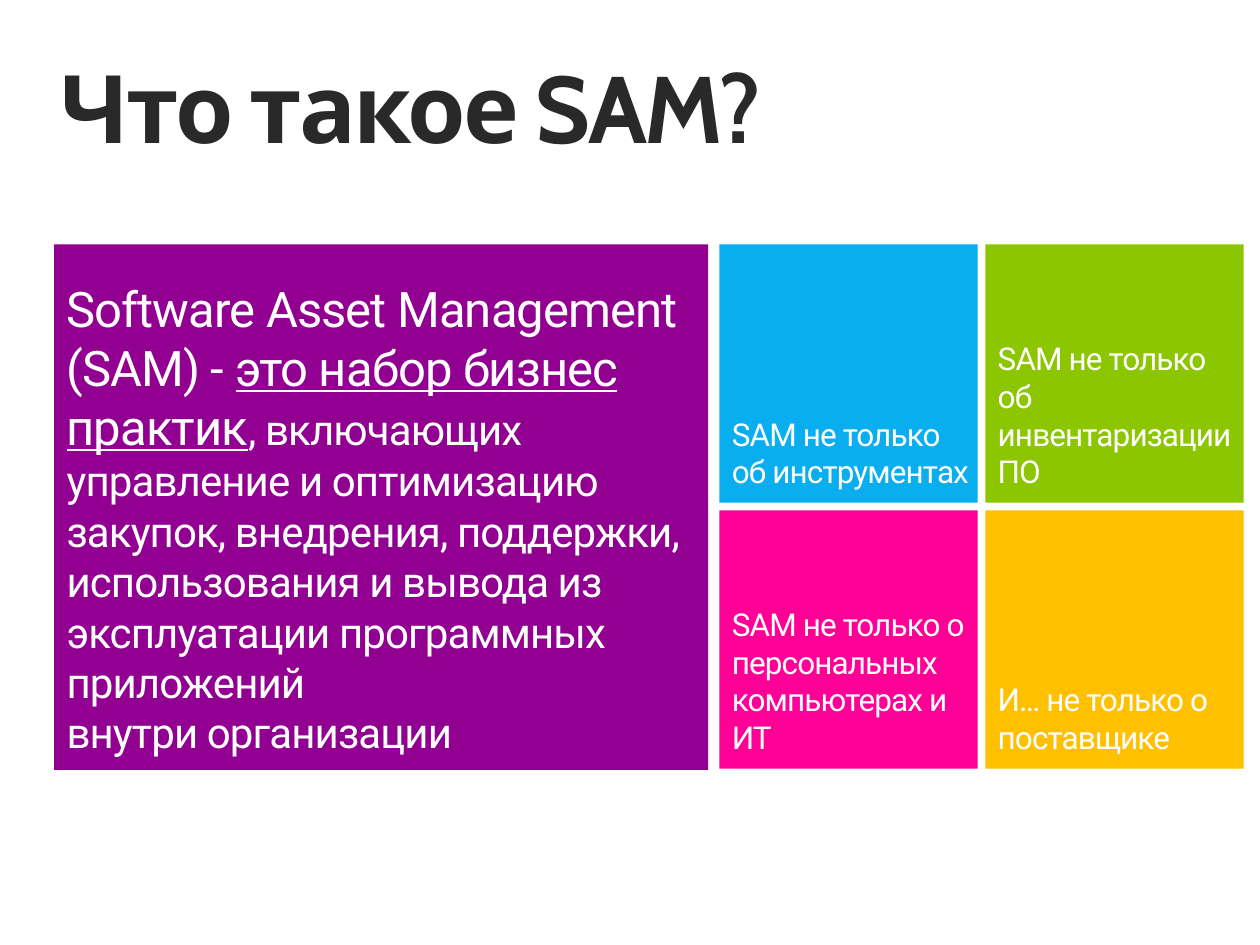
from dataclasses import dataclass

from pptx import Presentation
from pptx.dml.color import RGBColor
from pptx.enum.shapes import MSO_SHAPE
from pptx.enum.text import MSO_ANCHOR, MSO_AUTO_SIZE, PP_ALIGN
from pptx.util import Inches, Pt

COLORS = {
    "title": "292929",
    "text": "FFFFFF",
    "purple": "910091",
    "blue": "09AEEF",
    "green": "8CC600",
    "pink": "FF0097",
    "yellow": "FFC000",
}
GRID_LEFT, GRID_TOP = 5.71, 1.94
TILE_SIZE, TILE_STEP = 2.05, 2.11


@dataclass
class Tile:
    text: str
    color: str
    row: int
    col: int


TILES = [
    Tile("И… не только о поставщике", "yellow", 1, 1),
    Tile("SAM не только о персональных компьютерах и ИТ", "pink", 1, 0),
    Tile("SAM не только об инвентаризации ПО", "green", 0, 1),
    Tile("SAM не только об инструментах", "blue", 0, 0),
]


def add_run(p, text: str, *, size: float = 18, font: str = "Roboto",
            color: str = "text", bold: bool = False,
            underline: bool = False, spacing: float = -0.5) -> None:
    r = p.add_run()
    r.text = text
    r.font.size = Pt(size)
    r.font.name = font
    r.font.bold = bold
    r.font.underline = underline
    r.font.color.rgb = RGBColor.from_string(COLORS[color])
    r._r.get_or_add_rPr().set("spc", str(round(spacing * 100)))


def set_margins(tf, left: float, top: float, right: float, bottom: float) -> None:
    tf.margin_left, tf.margin_top = Inches(left), Inches(top)
    tf.margin_right, tf.margin_bottom = Inches(right), Inches(bottom)


def add_panel(s, left: float, top: float, width: float, height: float, color: str):
    """Add a plain rectangle and return its bottom-anchored text frame."""
    sp = s.shapes.add_shape(MSO_SHAPE.RECTANGLE, Inches(left), Inches(top),
                            Inches(width), Inches(height))
    sp.shadow.inherit = False
    sp.fill.solid()
    sp.fill.fore_color.rgb = RGBColor.from_string(COLORS[color])
    sp.line.fill.background()
    tf = sp.text_frame
    tf.word_wrap = True
    tf.vertical_anchor = MSO_ANCHOR.BOTTOM
    set_margins(tf, 0.1, 0.05, 0.05, 0.1)
    tf.paragraphs[0].alignment = PP_ALIGN.LEFT
    return tf


def add_title(s, text: str) -> None:
    title = s.shapes.title
    title.left, title.top = Inches(0.48), Inches(0.49)
    title.width, title.height = Inches(9), Inches(0.82)
    tf = title.text_frame
    tf.word_wrap = True
    tf.auto_size = MSO_AUTO_SIZE.SHAPE_TO_FIT_TEXT
    tf.vertical_anchor = MSO_ANCHOR.TOP
    set_margins(tf, 0, 0, 0, 0)
    p = tf.paragraphs[0]
    p.alignment = PP_ALIGN.LEFT
    p.line_spacing = 0.9
    add_run(p, text, size=54, font="Cabin", color="title", bold=True, spacing=-1.5)


def add_definition(s) -> None:
    tf = add_panel(s, 0.43, GRID_TOP, 5.19, 4.17, "purple")
    p = tf.paragraphs[0]
    add_run(p, "Software Asset Management (SAM) - ", size=28)
    add_run(p, "это набор бизнес практик", size=28, underline=True)
    add_run(p, ", включающих управление и оптимизацию закупок, внедрения, "
               "поддержки, использования и вывода из эксплуатации "
               "программных приложений", size=24)
    p = tf.add_paragraph()
    p.alignment = PP_ALIGN.LEFT
    add_run(p, "внутри организации", size=24)


def main() -> None:
    prs = Presentation()
    prs.slide_width, prs.slide_height = Inches(10), Inches(7.5)
    s = prs.slides.add_slide(prs.slide_layouts[5])
    add_title(s, "Что такое SAM?")
    for tile in TILES:
        tf = add_panel(s, GRID_LEFT + tile.col * TILE_STEP,
                       GRID_TOP + tile.row * TILE_STEP,
                       TILE_SIZE, TILE_SIZE, tile.color)
        add_run(tf.paragraphs[0], tile.text)
    add_definition(s)
    prs.save("out.pptx")


if __name__ == "__main__":
    main()
